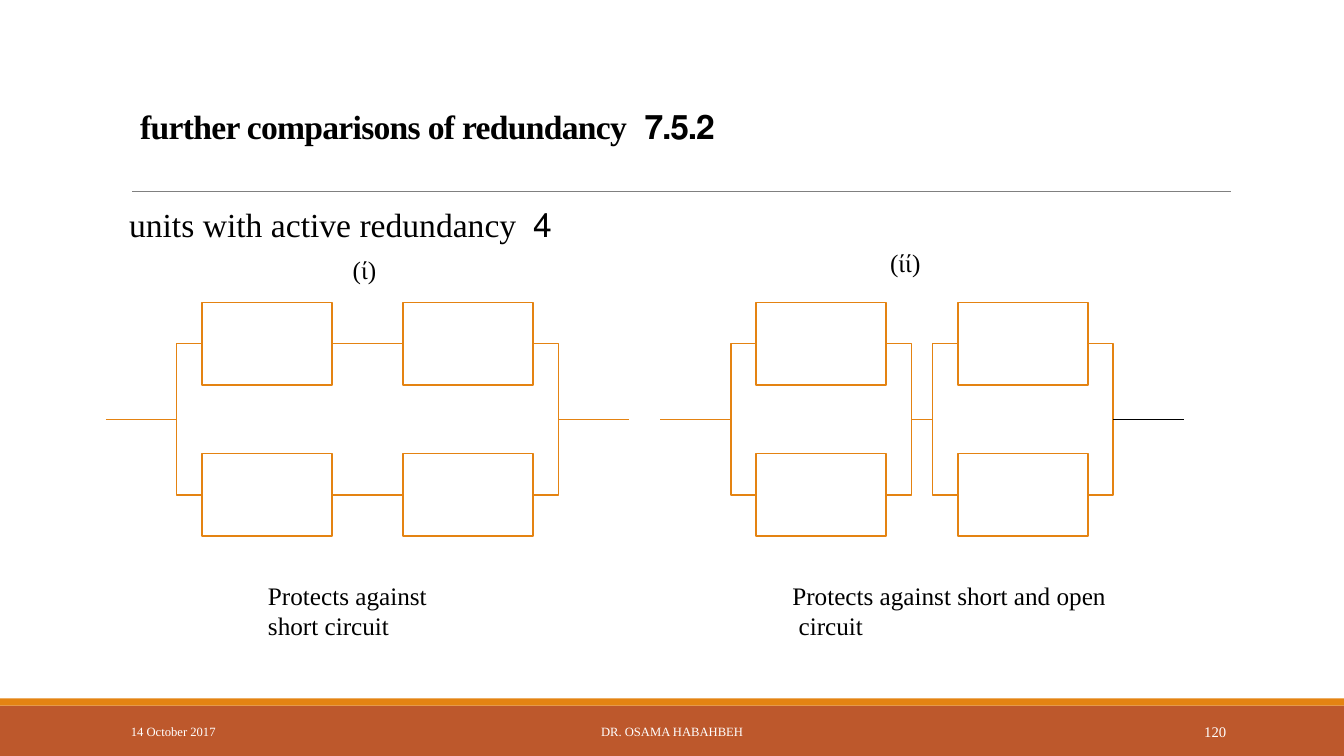
from dataclasses import dataclass

from lxml.etree import SubElement
from pptx import Presentation
from pptx.dml.color import RGBColor
from pptx.enum.shapes import MSO_CONNECTOR as Connector, MSO_SHAPE as Preset
from pptx.enum.text import MSO_ANCHOR as Anchor, MSO_AUTO_SIZE as AutoSize, PP_ALIGN as Align
from pptx.oxml.ns import qn
from pptx.util import Inches, Pt


@dataclass(frozen=True)
class Theme:
    font: str = "Times New Roman"
    ink: str = "000000"
    paper: str = "FFFFFF"
    accent: str = "E48312"
    footer: str = "BD582C"
    rule: str = "808080"
    heading: float = 24
    label: float = 18
    number: float = 10.5
    small: float = 9


THEME = Theme()
UNIT_W, UNIT_H = 1.29, 0.82
STEP_X, STEP_Y = 2, 1.5
BRACKET, LEAD = 0.25, 0.7


def color(code):
    return RGBColor.from_string(code)


def lengths(*values):
    return [Inches(value) for value in values]


def write(para, text, size=THEME.label, ink=THEME.ink, bold=False, align=Align.LEFT,
          rtl=False, spacing=None, tracking=None):
    para.alignment = align
    if spacing:
        para.line_spacing = spacing
    if rtl:
        para._p.get_or_add_pPr().set("rtl", "1")
    span = para.add_run()
    span.text = text
    span.font.name, span.font.size, span.font.bold = THEME.font, Pt(size), bold
    span.font.color.rgb = color(ink)
    if tracking:
        span.font._element.set("spc", str(tracking))


def set_frame(shape, box, anchor=Anchor.TOP, margins=(0.1, 0.05, 0.1, 0.05), wrap=True):
    shape.left, shape.top, shape.width, shape.height = lengths(*box)
    frame = shape.text_frame
    frame.auto_size, frame.word_wrap, frame.vertical_anchor = AutoSize.NONE, wrap, anchor
    (frame.margin_left, frame.margin_top,
     frame.margin_right, frame.margin_bottom) = lengths(*margins)
    return frame


def add_label(slide, box, *lines, anchor=Anchor.TOP, wrap=True, **style):
    frame = set_frame(slide.shapes.add_textbox(*lengths(*box)), box, anchor, wrap=wrap)
    for index, line in enumerate(lines):
        para = frame.add_paragraph() if index else frame.paragraphs[0]
        write(para, line, **style)


def add_block(slide, box, fill, line=None):
    block = slide.shapes.add_shape(Preset.RECTANGLE, *lengths(*box))
    block.shadow.inherit = False
    block.fill.solid()
    block.fill.fore_color.rgb = color(fill)
    if line:
        block.line.color.rgb, block.line.width = color(line), Pt(1.25)
    else:
        block.line.fill.background()


def add_line(slide, start, end, ink=THEME.accent, width=1):
    line = slide.shapes.add_connector(Connector.STRAIGHT, *lengths(*start, *end))
    line.line.color.rgb, line.line.width = color(ink), Pt(width)
    SubElement(line._element.spPr, qn("a:effectLst"))


def add_bracket(slide, x, y, reach):
    """Joins the upper and lower unit on one side; reach is signed."""
    builder = slide.shapes.build_freeform(*lengths(x, y))
    corners = [(x + reach, y), (x + reach, y + STEP_Y), (x, y + STEP_Y)]
    builder.add_line_segments([lengths(*corner) for corner in corners], close=False)
    bracket = builder.convert_to_shape()
    bracket.shadow.inherit = False
    bracket.fill.background()
    bracket.line.color.rgb, bracket.line.width = color(THEME.accent), Pt(1)


def add_circuit(slide, left, top, cross_linked=False, output=THEME.accent):
    right = left + STEP_X + UNIT_W
    wire = top + UNIT_H / 2
    middle = wire + STEP_Y / 2

    # Four units
    for row in range(2):
        for column in range(2):
            box = (left + column * STEP_X, top + row * STEP_Y, UNIT_W, UNIT_H)
            add_block(slide, box, THEME.paper, THEME.accent)

    # Outer brackets with input and output leads
    add_bracket(slide, left, wire, -BRACKET)
    add_bracket(slide, right, wire, BRACKET)
    add_line(slide, (left - BRACKET - LEAD, middle), (left - BRACKET, middle))
    add_line(slide, (right + BRACKET, middle), (right + BRACKET + LEAD, middle), output)

    # Links between the two columns
    inner_left, inner_right = left + UNIT_W, left + STEP_X
    if cross_linked:
        add_bracket(slide, inner_left, wire, BRACKET)
        add_bracket(slide, inner_right, wire, -BRACKET)
        add_line(slide, (inner_left + BRACKET, middle), (inner_right - BRACKET, middle))
    else:
        for y in (wire, wire + STEP_Y):
            add_line(slide, (inner_left, y), (inner_right, y))


def add_heading(slide, left, top):
    title = set_frame(slide.shapes.title, (left, top, 11, 1.59), Anchor.BOTTOM,
                      margins=(0.19, 0.05, 0.1, 0.45))
    write(title.paragraphs[0], "7.5.2  further comparisons of redundancy",
          size=THEME.heading, bold=True, rtl=True, spacing=0.85, tracking=-50)
    add_line(slide, (left + 0.11, top + 1.59), (left + 11.01, top + 1.59), THEME.rule, 0.5)

    body = set_frame(slide.placeholders[1], (left, top + 1.71, 10.53, 0.71),
                     margins=(0.08, 0.05, 0, 0.05))
    para = body.paragraphs[0]
    para.space_before, para.space_after = Pt(2), Pt(4)
    write(para, "4  units with active redundancy", size=THEME.heading, rtl=True, spacing=0.9)
    properties = para._p.get_or_add_pPr()
    properties.set("marL", "0")
    properties.set("indent", "0")
    SubElement(properties, qn("a:buNone"))


def add_footer(slide, top, width):
    add_block(slide, (0, top + 0.07, width, 0.5), THEME.footer)
    add_block(slide, (0, top, width, 0.07), THEME.accent)
    entries = [
        (1.2, 2.7, "14 October 2017", THEME.small, Align.LEFT),
        (4.03, 5.27, "DR. OSAMA HABAHBEH", THEME.small, Align.CENTER),
        (10.83, 1.43, "120", THEME.number, Align.RIGHT),
    ]
    for left, span_width, text, size, align in entries:
        add_label(slide, (left, top + 0.13, span_width, 0.4), text, anchor=Anchor.MIDDLE,
                  size=size, ink=THEME.paper, align=align)


def main():
    deck = Presentation()
    deck.slide_width, deck.slide_height = lengths(13.33, 7.5)
    slide = deck.slides.add_slide(deck.slide_layouts[1])

    add_footer(slide, 6.93, 13.33)
    add_heading(slide, 1.2, 0.31)

    # Series pairs in parallel
    add_circuit(slide, 2, 3)
    add_label(slide, (3.4, 2.47, 0.44, 0.4), "(ί)", wrap=False)
    add_label(slide, (2.56, 5.71, 2.2, 0.71), "Protects against", "short circuit")

    # Parallel pairs in series
    add_circuit(slide, 7.5, 3, cross_linked=True, output=THEME.ink)
    add_label(slide, (8.73, 2.4, 0.5, 0.4), "(ίί)", wrap=False)
    add_label(slide, (7.76, 5.71, 3.31, 0.71), "Protects against short and open  circuit")

    deck.save("out.pptx")


if __name__ == "__main__":
    main()
